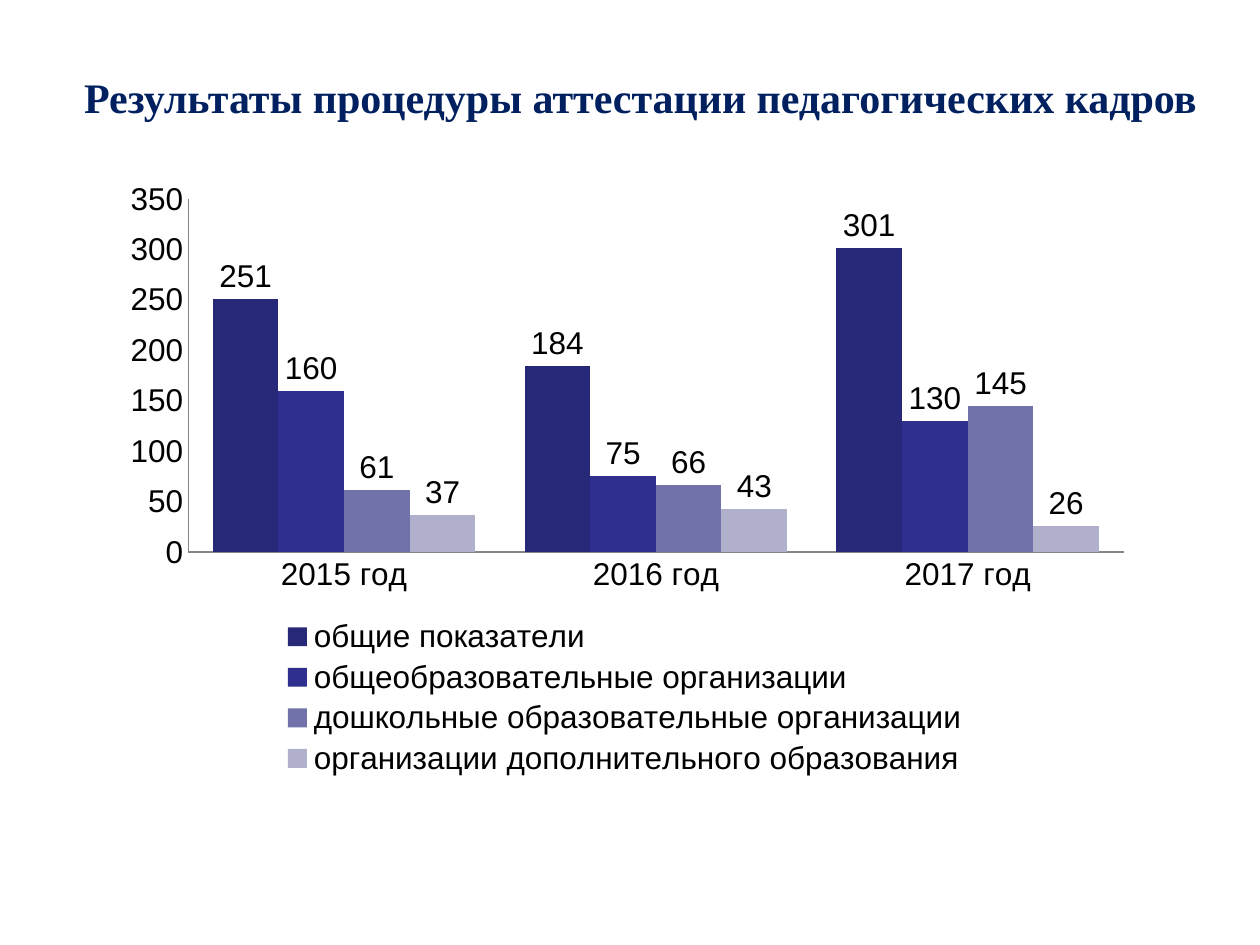
from lxml.etree import SubElement
from pptx import Presentation
from pptx.chart.data import CategoryChartData
from pptx.dml.color import RGBColor
from pptx.enum.chart import XL_CHART_TYPE, XL_LABEL_POSITION, XL_LEGEND_POSITION, XL_TICK_MARK
from pptx.enum.text import MSO_ANCHOR, PP_ALIGN
from pptx.oxml.ns import qn
from pptx.util import Pt

TITLE = "Результаты процедуры аттестации педагогических кадров"
YEARS = ["2015 год", "2016 год", "2017 год"]
SERIES = [
    ("общие показатели", [251, 184, 301], "total"),
    ("общеобразовательные организации", [160, 75, 130], "schools"),
    ("дошкольные образовательные организации", [61, 66, 145], "preschools"),
    ("организации дополнительного образования", [37, 43, 26], "extra"),
]
COLORS = {
    "title": "002060",
    "text": "000000",
    "axis": "868686",
    "total": "282878",
    "schools": "2F2F8F",
    "preschools": "7272AA",
    "extra": "B0B0CC",
}
TITLE_FONT = {"name": "Times New Roman", "size": Pt(24), "bold": True}
CHART_FONT = {"name": "Arial", "size": Pt(18), "bold": False}
TITLE_AREA = (36, 30, 660, 50)
CHART_AREA = (60, 96, 594, 354)
PLOT_LAYOUT = {"x": 0.08, "y": 0.05, "w": 0.9, "h": 0.57}
LEGEND_LAYOUT = {"x": 0.17, "y": 0.72, "w": 0.66, "h": 0.27}


def color(name):
    return RGBColor.from_string(COLORS[name])


def style_font(font, values, color_name):
    for key, value in values.items():
        setattr(font, key, value)
    font.color.rgb = color(color_name)


def set_layout(parent, index, values, inner=False):
    for old in parent.findall(qn("c:layout")):
        parent.remove(old)
    layout = SubElement(parent, qn("c:layout"))
    parent.insert(index, layout)
    manual = SubElement(layout, qn("c:manualLayout"))
    entries = [("layoutTarget", "inner")] if inner else []
    entries += [("xMode", "edge"), ("yMode", "edge"), *values.items()]
    for tag, value in entries:
        SubElement(manual, qn(f"c:{tag}")).set("val", str(value))


def add_title(page):
    box = page.shapes.add_textbox(*map(Pt, TITLE_AREA))
    frame = box.text_frame
    frame.word_wrap = True
    frame.vertical_anchor = MSO_ANCHOR.MIDDLE
    para = frame.paragraphs[0]
    para.alignment = PP_ALIGN.CENTER
    span = para.add_run()
    span.text = TITLE
    style_font(span.font, TITLE_FONT, "title")


def add_results_chart(page):
    data = CategoryChartData(number_format="0")
    data.categories = YEARS
    for name, values, _ in SERIES:
        data.add_series(name, values)
    chart = page.shapes.add_chart(
        XL_CHART_TYPE.COLUMN_CLUSTERED, *map(Pt, CHART_AREA), data
    ).chart
    chart.has_title = False
    style_font(chart.font, CHART_FONT, "text")

    for axis in (chart.category_axis, chart.value_axis):
        axis.major_tick_mark = axis.minor_tick_mark = XL_TICK_MARK.NONE
        axis.has_major_gridlines = False
        axis.format.line.color.rgb = color("axis")
        axis.format.line.width = Pt(0.75)
    for key, value in {"minimum_scale": 0, "maximum_scale": 350, "major_unit": 50}.items():
        setattr(chart.value_axis, key, value)

    plot = chart.plots[0]
    plot.gap_width = 75
    plot.overlap = 0
    plot.vary_by_categories = False
    for series, (_, _, color_name) in zip(plot.series, SERIES):
        series.format.fill.solid()
        series.format.fill.fore_color.rgb = color(color_name)
        labels = series.data_labels
        labels.show_value = True
        labels.position = XL_LABEL_POSITION.OUTSIDE_END
        style_font(labels.font, CHART_FONT, "text")

    chart.has_legend = True
    legend = chart.legend
    legend.position = XL_LEGEND_POSITION.BOTTOM
    legend.include_in_layout = False
    style_font(legend.font, CHART_FONT, "text")
    chart_root = chart.element
    set_layout(chart_root.find(f".//{qn('c:plotArea')}"), 0, PLOT_LAYOUT, inner=True)
    set_layout(chart_root.find(f".//{qn('c:legend')}"), 1, LEGEND_LAYOUT)


def main():
    deck = Presentation()
    deck.slide_width, deck.slide_height = Pt(720), Pt(540)
    page = deck.slides.add_slide(deck.slide_layouts[6])
    add_title(page)
    add_results_chart(page)
    deck.save("out.pptx")


if __name__ == "__main__":
    main()
